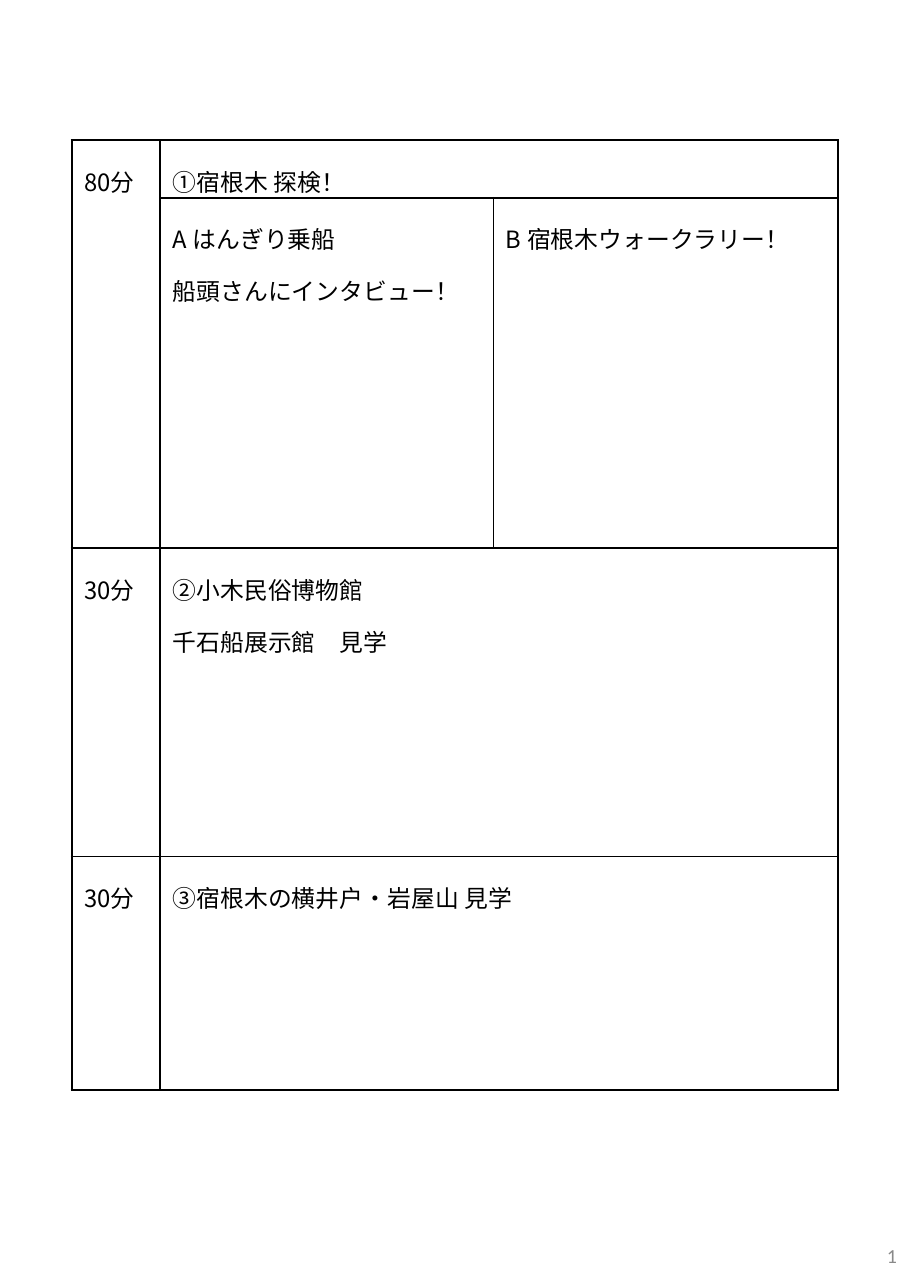
from lxml.etree import SubElement
from pptx import Presentation
from pptx.dml.color import RGBColor
from pptx.enum.text import MSO_ANCHOR, PP_ALIGN
from pptx.oxml.ns import qn
from pptx.util import Pt

PX = 9144  # 100 px to the inch
BLACK, GREY = "000000", "898989"
JAPANESE_FONT = "Noto Sans CJK JP"
COLUMNS = [57, 214, 221]
ROWS = [37, 225, 198, 150]
MERGES = [((0, 0), (1, 0)), ((0, 1), (0, 2)), ((2, 1), (2, 2)), ((3, 1), (3, 2))]
SCHEDULE = {
    (0, 0): ["80分"],
    (0, 1): ["①宿根木 探検！"],
    (1, 1): ["A はんぎり乗船", "船頭さんにインタビュー！"],
    (1, 2): ["B 宿根木ウォークラリー！"],
    (2, 0): ["30分"],
    (2, 1): ["②小木民俗博物館", "千石船展示館　見学"],
    (3, 0): ["30分"],
    (3, 1): ["③宿根木の横井戸・岩屋山 見学"],
}


def px(length):
    return length * PX


def color(value):
    return RGBColor.from_string(value)


def set_format(target, values):
    for name, value in values.items():
        setattr(target, name, value)


def style_run(run, font_name, size, text_color):
    set_format(run.font, {"name": font_name, "size": Pt(size)})
    run.font.color.rgb = color(text_color)
    SubElement(run.font._element, qn("a:ea"), typeface=font_name)


def add_borders(cell):
    properties = cell._tc.get_or_add_tcPr()
    for side in ("lnL", "lnR", "lnT", "lnB"):
        line = SubElement(properties, qn(f"a:{side}"), w=str(Pt(1)))
        fill = SubElement(line, qn("a:solidFill"))
        SubElement(fill, qn("a:srgbClr"), val=BLACK)


def fill_cell(cell, lines):
    set_format(cell, {"margin_left": px(8), "margin_right": px(8),
                      "margin_top": px(4), "margin_bottom": px(4)})
    frame = cell.text_frame
    for index, line in enumerate(lines):
        paragraph = frame.add_paragraph() if index else frame.paragraphs[0]
        paragraph.line_spacing = 1.5
        run = paragraph.add_run()
        run.text = line
        style_run(run, JAPANESE_FONT, 11, BLACK)


def add_schedule(slide, left, top):
    frame = slide.shapes.add_table(len(ROWS), len(COLUMNS), px(left), px(top),
                                   px(sum(COLUMNS)), px(sum(ROWS)))
    table = frame.table
    set_format(table, {"first_row": False, "horz_banding": False})
    for column, width in zip(table.columns, COLUMNS):
        column.width = px(width)
    for row, height in zip(table.rows, ROWS):
        row.height = px(height)
    for cell in table.iter_cells():
        add_borders(cell)
        cell.fill.background()
    for first, last in MERGES:
        table.cell(*first).merge(table.cell(*last))
    for position, lines in SCHEDULE.items():
        fill_cell(table.cell(*position), lines)


def add_page_number(slide, left, top, width, height):
    box = slide.shapes.add_textbox(px(left), px(top), px(width), px(height))
    frame = box.text_frame
    set_format(frame, {"word_wrap": True, "vertical_anchor": MSO_ANCHOR.MIDDLE,
                       "margin_left": px(8), "margin_right": px(8),
                       "margin_top": px(4), "margin_bottom": px(4)})
    paragraph = frame.paragraphs[0]
    paragraph.alignment = PP_ALIGN.RIGHT
    run = paragraph.add_run()
    run.text = "1"
    style_run(run, "Calibri", 9.2, GREY)


def main():
    presentation = Presentation()
    set_format(presentation, {"slide_width": px(585), "slide_height": px(827)})
    slide = presentation.slides.add_slide(presentation.slide_layouts[6])
    add_page_number(slide, 448, 794, 136, 24)
    add_schedule(slide, 46, 90)
    presentation.save("out.pptx")


if __name__ == "__main__":
    main()
